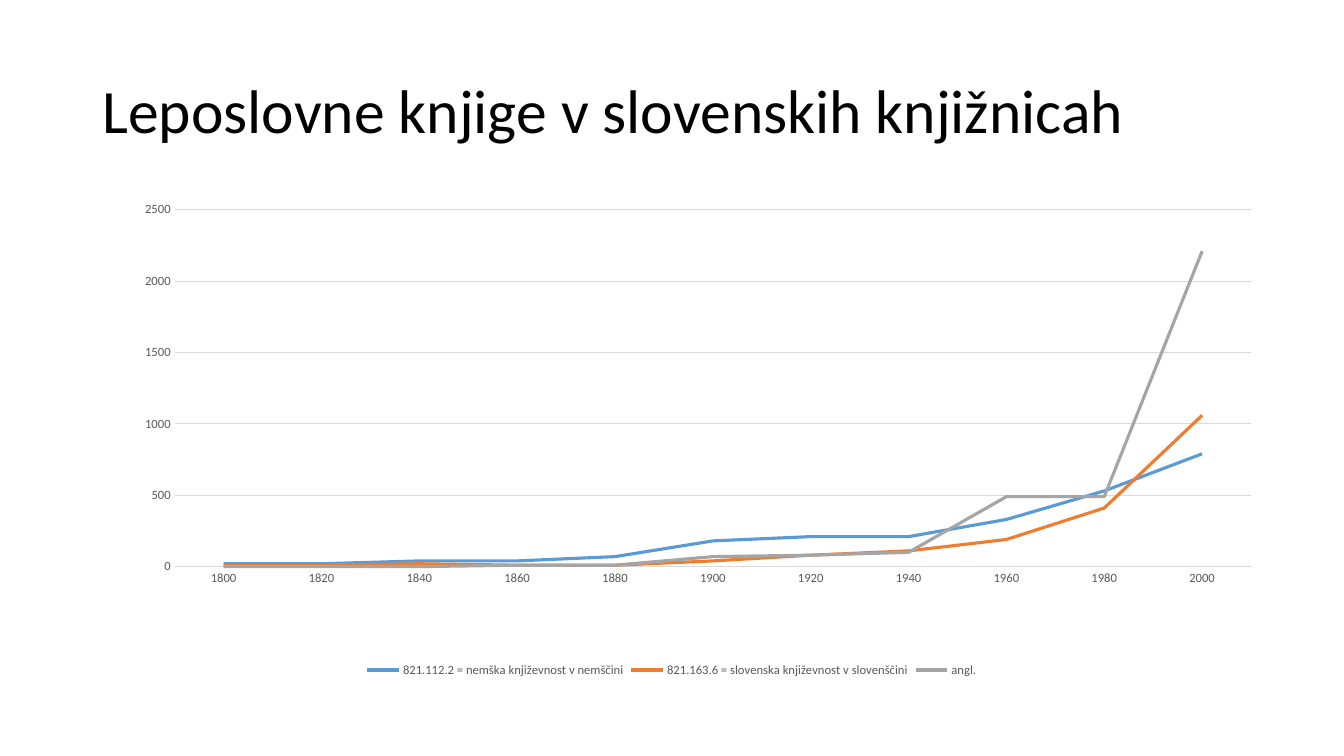
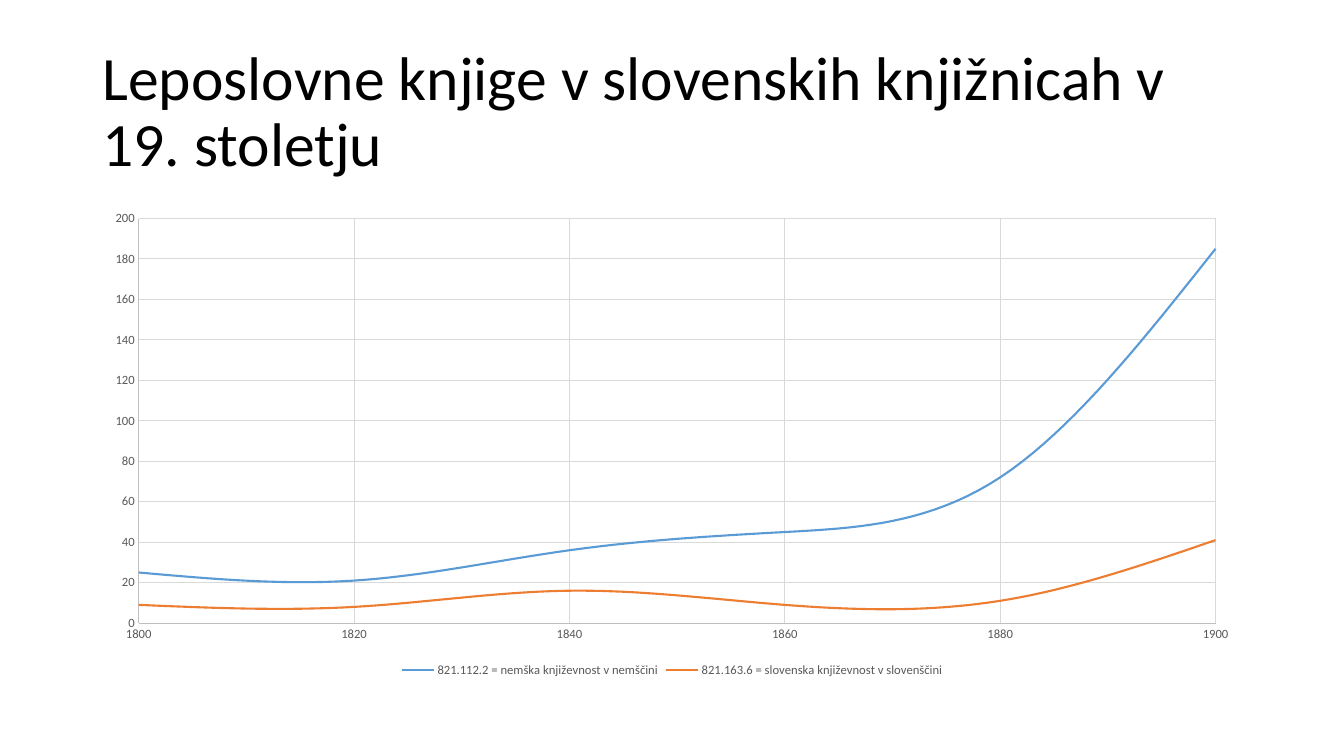
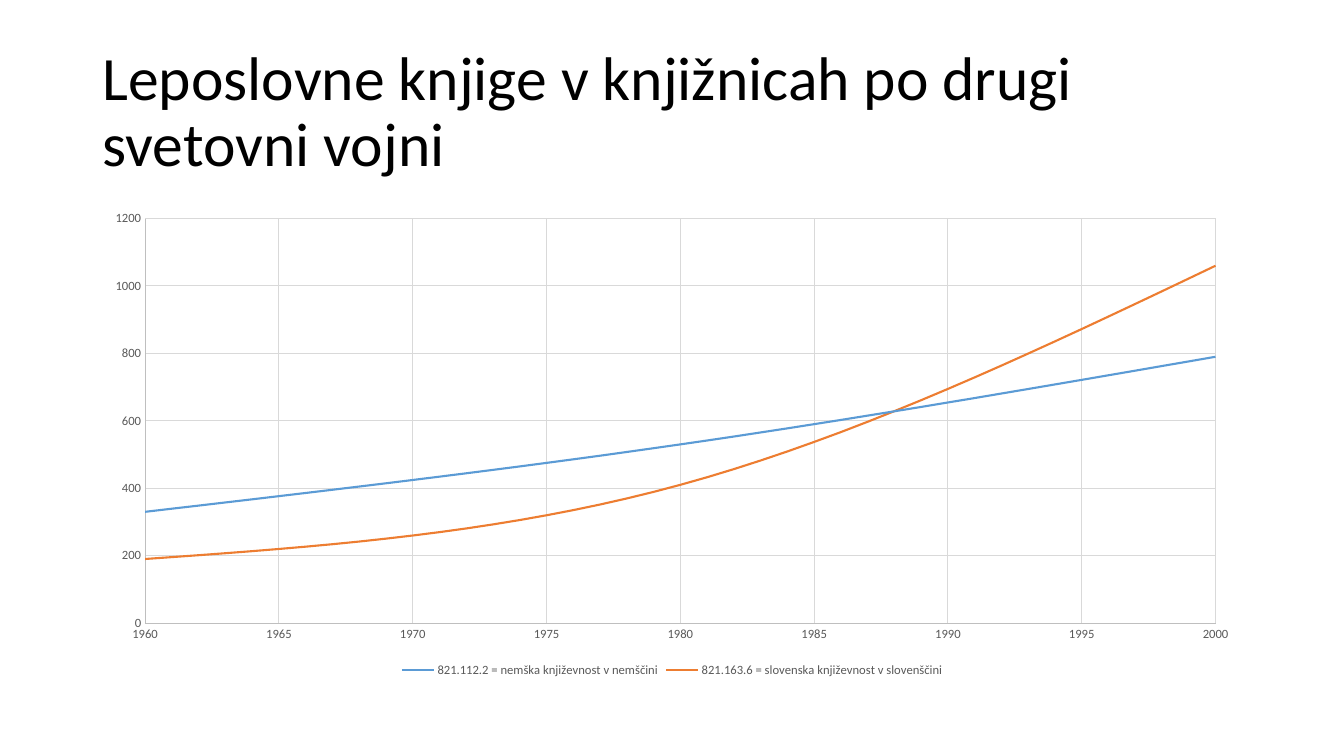
from dataclasses import dataclass

from pptx import Presentation
from pptx.chart.data import CategoryChartData, XyChartData
from pptx.dml.color import RGBColor as RGB
from pptx.enum.chart import XL_CHART_TYPE as ChartType
from pptx.enum.chart import XL_LEGEND_POSITION as LegendPosition
from pptx.enum.chart import XL_TICK_MARK as TickMark
from pptx.enum.text import MSO_ANCHOR as Anchor
from pptx.enum.text import MSO_AUTO_SIZE as AutoSize
from pptx.enum.text import PP_ALIGN as Align
from pptx.oxml import parse_xml
from pptx.oxml.ns import nsdecls, qn
from pptx.util import Pt


@dataclass(frozen=True)
class Theme:
    font: str = "Calibri"
    title_size: int = 44
    chart_size: int = 10
    label_size: int = 9
    text: RGB = RGB(0x00, 0x00, 0x00)
    label: RGB = RGB(0x59, 0x59, 0x59)
    grid: RGB = RGB(0xD9, 0xD9, 0xD9)
    axis: RGB = RGB(0xBF, 0xBF, 0xBF)
    hairline: float = 0.75
    series: tuple = (RGB(0x5B, 0x9B, 0xD5), RGB(0xED, 0x7D, 0x31), RGB(0xA5, 0xA5, 0xA5))


theme = Theme()
LEFT, WIDTH = Pt(66), Pt(828)
GERMAN = "821.112.2 = nemška književnost v nemščini"
SLOVENE = "821.163.6 = slovenska književnost v slovenščini"

# x_axis and y_axis hold (minimum, maximum, major unit); no x_axis means categories
slides = [
    dict(
        title="Leposlovne knjige v slovenskih knjižnicah",
        years=range(1800, 2001, 20),
        series={
            GERMAN: [20, 20, 40, 40, 70, 180, 210, 210, 330, 530, 790],
            SLOVENE: [10, 10, 20, 10, 10, 40, 80, 110, 190, 410, 1060],
            "angl.": [0, 0, 0, 10, 10, 70, 80, 100, 490, 490, 2210],
        },
        x_axis=None,
        y_axis=(0, 2500, 500),
        plot_area=dict(x=0.071, y=0.017, w=0.929, h=0.744),
    ),
    dict(
        title="Leposlovne knjige v slovenskih knjižnicah v 19. stoletju",
        years=range(1800, 1901, 20),
        series={GERMAN: [25, 21, 36, 45, 72, 185], SLOVENE: [9, 8, 16, 9, 11, 41]},
        x_axis=(1800, 1900, 20),
        y_axis=(0, 200, 20),
        plot_area=None,
    ),
    dict(
        title="Leposlovne knjige v knjižnicah po drugi svetovni vojni",
        years=range(1960, 2001, 20),
        series={GERMAN: [330, 530, 790], SLOVENE: [190, 410, 1060]},
        x_axis=(1960, 2000, 5),
        y_axis=(0, 1200, 200),
        plot_area=None,
    ),
]


def style_font(font, size, color):
    font.name = theme.font
    font.size = Pt(size)
    font.color.rgb = color


def style_axis(axis, line_color, scale):
    """Format an axis; without a scale it has no gridlines, without a colour no line."""
    axis.major_tick_mark = axis.minor_tick_mark = TickMark.NONE
    style_font(axis.tick_labels.font, theme.label_size, theme.label)
    if line_color is None:
        axis.format.line.fill.background()
    else:
        axis.format.line.color.rgb = line_color
        axis.format.line.width = Pt(theme.hairline)
    axis.has_major_gridlines = scale is not None
    if scale:
        axis.minimum_scale, axis.maximum_scale, axis.major_unit = scale
        grid_line = axis.major_gridlines.format.line
        grid_line.color.rgb = theme.grid
        grid_line.width = Pt(theme.hairline)


deck = Presentation()
deck.slide_width, deck.slide_height = Pt(960), Pt(540)

for content in slides:
    page = deck.slides.add_slide(deck.slide_layouts[5])

    title = page.shapes.title
    title.left, title.top, title.width, title.height = LEFT, Pt(28.75), WIDTH, Pt(104.4)
    frame = title.text_frame
    frame.word_wrap = True
    frame.auto_size = AutoSize.NONE
    frame.vertical_anchor = Anchor.MIDDLE
    para = frame.paragraphs[0]
    para.alignment = Align.LEFT
    para.line_spacing = 0.9
    span = para.add_run()
    span.text = content["title"]
    style_font(span.font, theme.title_size, theme.text)

    is_scatter = content["x_axis"] is not None
    if is_scatter:
        chart_type = ChartType.XY_SCATTER_SMOOTH_NO_MARKERS
        data = XyChartData()
        for name, values in content["series"].items():
            points = data.add_series(name)
            for year, value in zip(content["years"], values):
                points.add_data_point(year, value)
    else:
        chart_type = ChartType.LINE
        data = CategoryChartData()
        data.categories = [str(year) for year in content["years"]]
        for name, values in content["series"].items():
            data.add_series(name, values)

    chart = page.shapes.add_chart(chart_type, LEFT, Pt(144), WIDTH, Pt(342.7), data).chart
    chart.has_title = False
    style_font(chart.font, theme.chart_size, theme.text)
    chart.has_legend = True
    chart.legend.position = LegendPosition.BOTTOM
    chart.legend.include_in_layout = False
    style_font(chart.legend.font, theme.label_size, theme.label)

    style_axis(chart.category_axis, theme.axis if is_scatter else theme.grid, content["x_axis"])
    style_axis(chart.value_axis, theme.axis if is_scatter else None, content["y_axis"])

    plot = chart.plots[0]
    plot.vary_by_categories = False
    for series, color in zip(plot.series, theme.series):
        series.format.line.color.rgb = color
        series.format.line.width = Pt(1.5 if is_scatter else 2.25)
    for smooth in chart.element.iter(qn("c:smooth")):
        smooth.set("val", "1" if is_scatter else "0")

    if content["plot_area"]:
        area = chart.element.find(".//" + qn("c:plotArea"))
        for layout in area.findall(qn("c:layout")):
            area.remove(layout)
        edges = "".join(f'<c:{key} val="{share}"/>' for key, share in content["plot_area"].items())
        area.insert(0, parse_xml(
            f'<c:layout {nsdecls("c")}><c:manualLayout><c:layoutTarget val="inner"/>'
            f'<c:xMode val="edge"/><c:yMode val="edge"/>{edges}</c:manualLayout></c:layout>'
        ))

deck.save("out.pptx")
